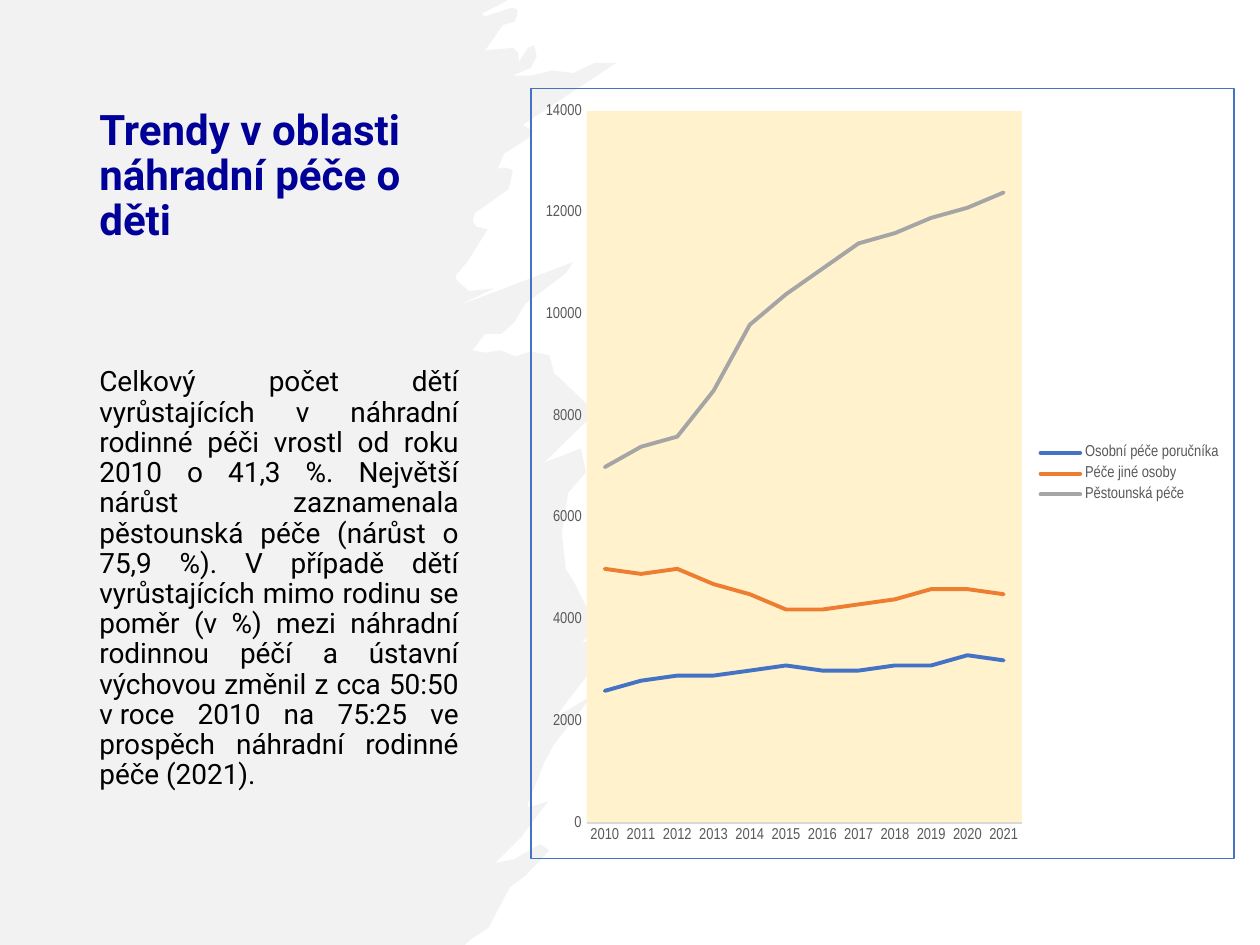
from dataclasses import dataclass

from lxml import etree
from pptx import Presentation
from pptx import util as u
from pptx.chart import data as chart_data
from pptx.dml import color
from pptx.enum import chart as chart_enum
from pptx.enum import text
from pptx.oxml import ns, parse_xml

SCALE = 9144


@dataclass(frozen=True)
class Theme:
    heading: str = "000099"
    body: str = "000000"
    brush: str = "E7E6E6"
    brush_alpha: int = 50000
    plot: str = "FFF2CC"
    label: str = "595959"
    axis: str = "D9D9D9"
    border: str = "4472C4"
    font: str = "Roboto"
    chart_font: str = "Arial Narrow"
    heading_size: int = 24
    body_size: int = 16
    label_size: int = 9
    series_width: float = 2.25
    hairline: float = 0.75


@dataclass(frozen=True)
class Box:
    left: int
    top: int
    width: int
    height: int

    def emu(self) -> tuple:
        return tuple(px(side) for side in (self.left, self.top, self.width, self.height))


@dataclass(frozen=True)
class TextBlock:
    box: Box
    words: str
    size: int
    color: str
    bold: bool
    align: text.PP_ALIGN
    anchor: text.MSO_ANCHOR
    before: float


@dataclass(frozen=True)
class Series:
    name: str
    color: str
    values: tuple


THEME = Theme()
CHART_BOX = Box(421, 70, 559, 612)
PLOT_BOX = Box(465, 88, 346, 566)
YEARS = [str(year) for year in range(2010, 2022)]

SERIES = [
    Series("Osobní péče poručníka", "4472C4",
           (2600, 2800, 2900, 2900, 3000, 3100, 3000, 3000, 3100, 3100, 3300, 3200)),
    Series("Péče jiné osoby", "ED7D31",
           (5000, 4900, 5000, 4700, 4500, 4200, 4200, 4300, 4400, 4600, 4600, 4500)),
    Series("Pěstounská péče", "A5A5A5",
           (7000, 7400, 7600, 8500, 9800, 10400, 10900, 11400, 11600, 11900, 12100, 12400)),
]

TEXTS = [
    TextBlock(Box(69, 42, 319, 197), "Trendy v oblasti náhradní péče o děti",
              THEME.heading_size, THEME.heading, True,
              text.PP_ALIGN.LEFT, text.MSO_ANCHOR.MIDDLE, 0),
    TextBlock(Box(69, 287, 305, 389),
              "Celkový počet dětí vyrůstajících v náhradní rodinné péči vrostl od roku 2010 "
              "o 41,3 %. Největší nárůst zaznamenala pěstounská péče (nárůst o 75,9 %). "
              "V případě dětí vyrůstajících mimo rodinu se poměr (v %) mezi náhradní rodinnou "
              "péčí a ústavní výchovou změnil z cca 50:50 v\u00a0roce 2010 na 75:25 ve prospěch "
              "náhradní rodinné péče (2021).",
              THEME.body_size, THEME.body, False,
              text.PP_ALIGN.JUSTIFY, text.MSO_ANCHOR.TOP, 7.5),
]

BRUSH_EDGE = [
    (403, 0), (0, 0), (0, 750), (369, 750), (373, 746), (388, 736), (401, 711), (405, 704),
    (417, 695), (436, 675), (429, 670), (408, 682), (393, 685), (414, 664), (435, 636),
    (419, 641), (419, 638), (432, 605), (439, 592), (470, 552), (440, 570), (470, 531),
    (485, 517), (489, 509), (482, 507), (462, 510), (487, 484), (469, 488), (463, 477),
    (455, 461), (449, 452), (446, 423), (451, 391), (465, 375), (461, 356), (432, 367),
    (476, 324), (468, 323), (442, 298), (440, 297), (436, 282), (421, 279), (409, 283),
    (397, 278), (385, 280), (375, 278), (385, 265), (398, 265), (408, 256), (417, 241),
    (449, 217), (455, 208), (363, 243), (392, 229), (372, 231), (362, 222), (362, 218),
    (370, 209), (374, 203), (387, 182), (378, 180), (375, 175), (377, 169), (404, 150),
    (407, 135), (401, 133), (395, 134), (400, 122), (419, 110), (423, 104), (418, 101),
    (415, 99), (489, 50), (472, 50), (455, 58), (438, 56), (422, 60), (407, 60), (421, 54),
    (426, 45), (424, 36), (419, 38), (412, 49), (411, 42), (407, 38), (385, 40), (399, 20),
    (409, 17), (411, 8), (407, 6), (385, 13), (382, 11), (394, 5),
]


def px(length: int) -> int:
    return length * SCALE


def rgb(value: str) -> color.RGBColor:
    return color.RGBColor.from_string(value)


def add_brush(slide) -> None:
    builder = slide.shapes.build_freeform(*BRUSH_EDGE[0], scale=SCALE)
    builder.add_line_segments(BRUSH_EDGE[1:], close=True)
    shape = builder.convert_to_shape()
    shape.shadow.inherit = False
    shape.line.fill.background()
    shape.fill.solid()
    shape.fill.fore_color.rgb = rgb(THEME.brush)
    fill_color = shape._element.spPr.find(".//" + ns.qn("a:srgbClr"))
    etree.SubElement(fill_color, ns.qn("a:alpha")).set("val", str(THEME.brush_alpha))


def add_text(slide, block: TextBlock) -> None:
    shape = slide.shapes.add_textbox(*block.box.emu())
    text_frame = shape.text_frame
    text_frame.word_wrap = True
    text_frame.vertical_anchor = block.anchor
    text_frame.text = block.words
    paragraph = text_frame.paragraphs[0]
    paragraph.alignment = block.align
    paragraph.line_spacing = 0.9
    paragraph.space_before = u.Pt(block.before)
    font = paragraph.runs[0].font
    font.name, font.size, font.bold = THEME.font, u.Pt(block.size), block.bold
    font.color.rgb = rgb(block.color)


def set_plot_layout(chart) -> None:
    fractions = {
        "x": (PLOT_BOX.left - CHART_BOX.left) / CHART_BOX.width,
        "y": (PLOT_BOX.top - CHART_BOX.top) / CHART_BOX.height,
        "w": PLOT_BOX.width / CHART_BOX.width,
        "h": PLOT_BOX.height / CHART_BOX.height,
    }
    modes = '<c:layoutTarget val="inner"/><c:xMode val="edge"/><c:yMode val="edge"/>'
    sides = "".join(f'<c:{key} val="{value:.3f}"/>' for key, value in fractions.items())
    plot_area = chart._chartSpace.chart.plotArea
    for layout in plot_area.findall(ns.qn("c:layout")):
        plot_area.remove(layout)
    plot_area.insert(0, parse_xml(
        f'<c:layout {ns.nsdecls("c")}><c:manualLayout>{modes}{sides}</c:manualLayout></c:layout>'))


def paint_chart_areas(chart) -> None:
    def properties(fill: str, line: str):
        return parse_xml(f'<c:spPr {ns.nsdecls("c", "a")}>{fill}{line}</c:spPr>')

    def solid(value: str) -> str:
        return f'<a:solidFill><a:srgbClr val="{value}"/></a:solidFill>'

    border = f'<a:ln w="{u.Pt(THEME.hairline)}">{solid(THEME.border)}</a:ln>'
    chart_element = chart._chartSpace.chart
    chart_element.plotArea.append(properties(solid(THEME.plot), "<a:ln><a:noFill/></a:ln>"))
    chart_element.addnext(properties("<a:noFill/>", border))


def add_trend_chart(slide) -> None:
    data = chart_data.CategoryChartData()
    data.categories = YEARS
    for series in SERIES:
        data.add_series(series.name, series.values)
    chart = slide.shapes.add_chart(
        chart_enum.XL_CHART_TYPE.LINE, *CHART_BOX.emu(), data).chart
    chart.has_title = False
    chart.font.name, chart.font.size = THEME.chart_font, u.Pt(THEME.label_size)
    chart.font.color.rgb = rgb(THEME.label)
    chart.has_legend = True
    chart.legend.position = chart_enum.XL_LEGEND_POSITION.RIGHT
    chart.legend.include_in_layout = False
    for axis in (chart.category_axis, chart.value_axis):
        axis.has_major_gridlines = False
        axis.major_tick_mark = axis.minor_tick_mark = chart_enum.XL_TICK_MARK.NONE
    chart.category_axis.format.line.color.rgb = rgb(THEME.axis)
    chart.category_axis.format.line.width = u.Pt(THEME.hairline)
    value_axis = chart.value_axis
    value_axis.format.line.fill.background()
    value_axis.minimum_scale, value_axis.maximum_scale, value_axis.major_unit = 0, 14000, 2000
    chart.plots[0].vary_by_categories = False
    for plotted, series in zip(chart.plots[0].series, SERIES):
        plotted.smooth = False
        plotted.marker.style = chart_enum.XL_MARKER_STYLE.NONE
        plotted.format.line.color.rgb = rgb(series.color)
        plotted.format.line.width = u.Pt(THEME.series_width)
        plotted.format.line._get_or_add_ln().set("cap", "rnd")
    set_plot_layout(chart)
    paint_chart_areas(chart)


def main() -> None:
    presentation = Presentation()
    presentation.slide_width, presentation.slide_height = px(1000), px(750)
    slide = presentation.slides.add_slide(presentation.slide_layouts[6])
    add_brush(slide)
    for block in TEXTS:
        add_text(slide, block)
    add_trend_chart(slide)
    presentation.save("out.pptx")


if __name__ == "__main__":
    main()
